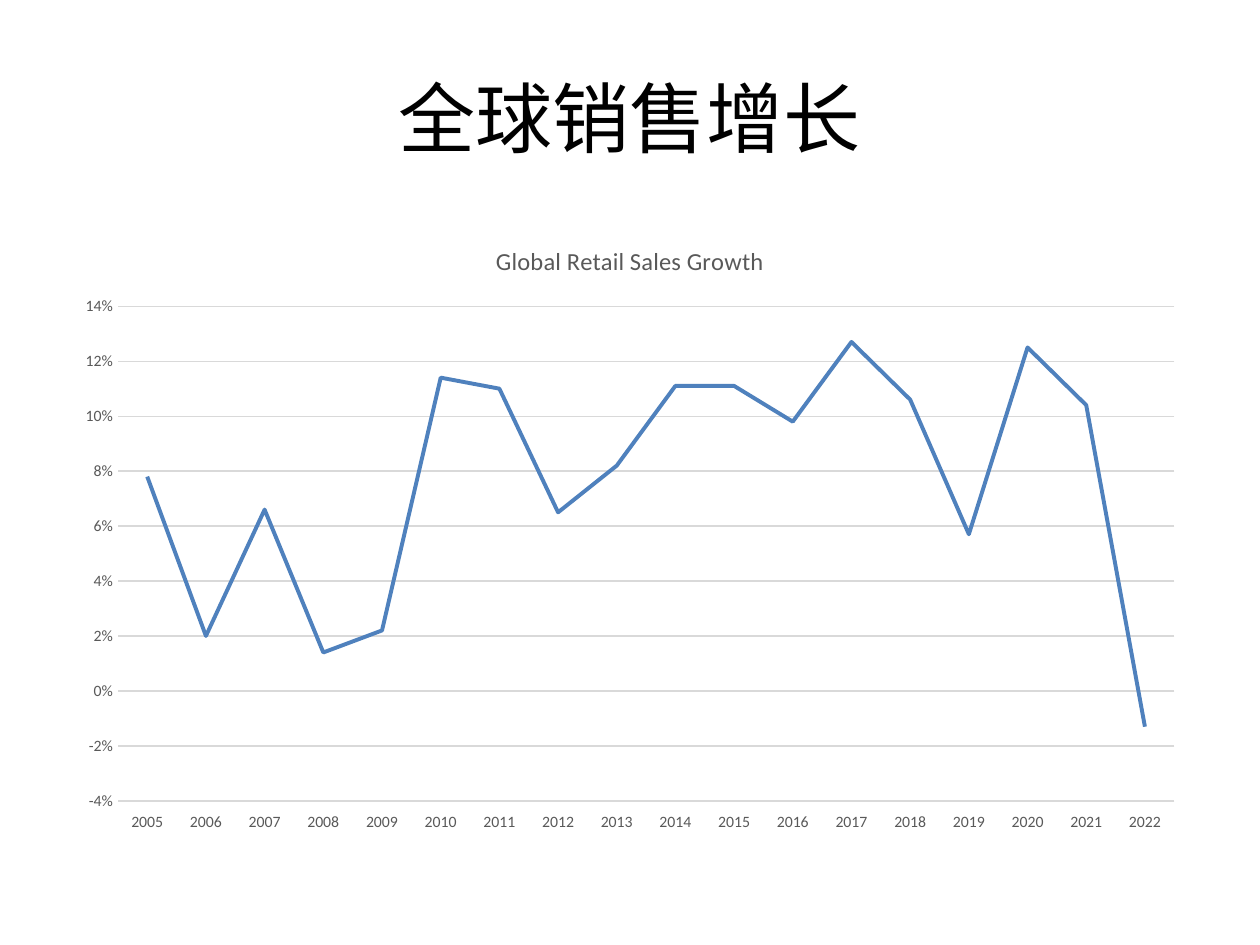
from dataclasses import dataclass

from pptx import Presentation
from pptx import util as u
from pptx.chart.data import CategoryChartData
from pptx.dml.color import RGBColor
from pptx.enum import chart as charts, text

HEADING = "全球销售增长"
CHART_TITLE = "Global Retail Sales Growth"
FIRST_YEAR = 2005
GROWTH = [0.078, 0.02, 0.066, 0.014, 0.022, 0.114, 0.11, 0.065, 0.082,
          0.111, 0.111, 0.098, 0.127, 0.106, 0.057, 0.125, 0.104, -0.013]


@dataclass(frozen=True)
class Theme:
    font: str = "Calibri"
    black: str = "000000"
    grey: str = "595959"
    grid: str = "D9D9D9"
    line: str = "4F81BD"
    heading_size: float = 44
    chart_title_size: float = 14
    chart_size: float = 10
    axis_size: float = 9
    grid_width: float = 0.75
    line_width: float = 2.25


THEME = Theme()
SLIDE_WIDTH, SLIDE_HEIGHT = 720, 540
MARGIN = 36
CONTENT_WIDTH = SLIDE_WIDTH - 2 * MARGIN
HEADING_TOP, HEADING_HEIGHT = 21.6, 90
CHART_TOP, CHART_HEIGHT = 126, 356.4


def style_font(font, size, color):
    font.name = THEME.font
    font.size = u.Pt(size)
    font.bold = False
    font.color.rgb = RGBColor.from_string(color)


def style_line(line, color, width):
    line.color.rgb = RGBColor.from_string(color)
    line.width = u.Pt(width)


def style_axis(axis):
    axis.major_tick_mark = charts.XL_TICK_MARK.NONE
    axis.minor_tick_mark = charts.XL_TICK_MARK.NONE
    style_font(axis.tick_labels.font, THEME.axis_size, THEME.grey)


def add_heading(slide):
    box = slide.shapes.add_textbox(u.Pt(MARGIN), u.Pt(HEADING_TOP),
                                   u.Pt(CONTENT_WIDTH), u.Pt(HEADING_HEIGHT))
    frame = box.text_frame
    frame.word_wrap = True
    frame.vertical_anchor = text.MSO_ANCHOR.MIDDLE
    paragraph = frame.paragraphs[0]
    paragraph.alignment = text.PP_ALIGN.CENTER
    run = paragraph.add_run()
    run.text = HEADING
    style_font(run.font, THEME.heading_size, THEME.black)


def add_growth_chart(slide):
    data = CategoryChartData(number_format="0%")
    data.categories = [str(FIRST_YEAR + i) for i in range(len(GROWTH))]
    data.add_series(CHART_TITLE, GROWTH)
    chart = slide.shapes.add_chart(
        charts.XL_CHART_TYPE.LINE, u.Pt(MARGIN), u.Pt(CHART_TOP),
        u.Pt(CONTENT_WIDTH), u.Pt(CHART_HEIGHT), data).chart
    style_font(chart.font, THEME.chart_size, THEME.black)
    chart.has_legend = False
    chart.has_title = True
    chart.chart_title.include_in_layout = False
    run = chart.chart_title.text_frame.paragraphs[0].add_run()
    run.text = CHART_TITLE
    style_font(run.font, THEME.chart_title_size, THEME.grey)

    years = chart.category_axis
    style_axis(years)
    years.tick_label_position = charts.XL_TICK_LABEL_POSITION.LOW
    style_line(years.format.line, THEME.grid, THEME.grid_width)

    rates = chart.value_axis
    style_axis(rates)
    rates.minimum_scale, rates.maximum_scale = -0.04, 0.14
    rates.major_unit = 0.02
    rates.tick_labels.number_format = "0%"
    rates.tick_labels.number_format_is_linked = False
    rates.format.line.fill.background()
    style_line(rates.major_gridlines.format.line, THEME.grid, THEME.grid_width)

    plot = chart.plots[0]
    plot.vary_by_categories = False
    series = plot.series[0]
    series.smooth = False
    series.marker.style = charts.XL_MARKER_STYLE.NONE
    style_line(series.format.line, THEME.line, THEME.line_width)


def main():
    presentation = Presentation()
    presentation.slide_width = u.Pt(SLIDE_WIDTH)
    presentation.slide_height = u.Pt(SLIDE_HEIGHT)
    slide = presentation.slides.add_slide(presentation.slide_layouts[6])
    add_heading(slide)
    add_growth_chart(slide)
    presentation.save("out.pptx")


if __name__ == "__main__":
    main()
